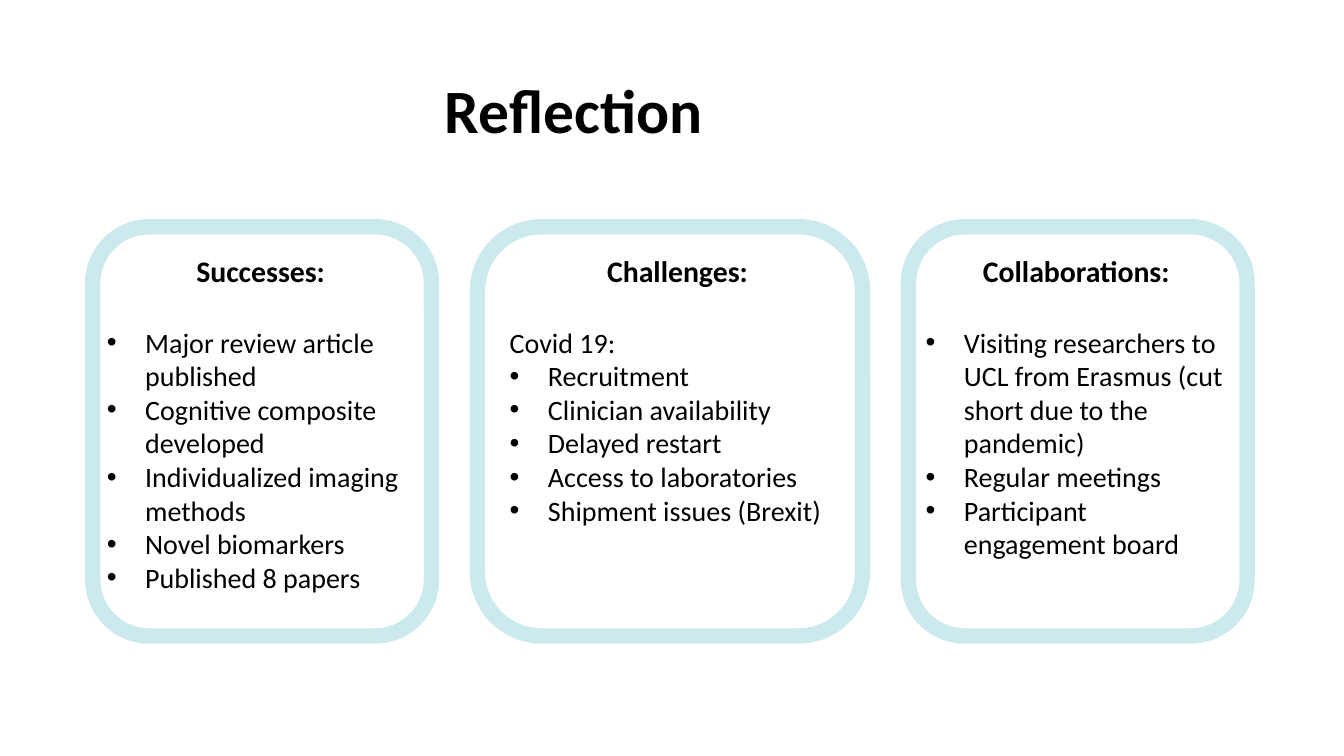
from lxml import etree
from pptx import Presentation
from pptx.dml.color import RGBColor
from pptx.enum.shapes import MSO_SHAPE
from pptx.enum.text import MSO_ANCHOR, PP_ALIGN
from pptx.oxml.ns import qn
from pptx.util import Inches, Pt

ROUNDED = MSO_SHAPE.ROUNDED_RECTANGLE
CENTER, LEFT = PP_ALIGN.CENTER, PP_ALIGN.LEFT
TOP, MIDDLE = MSO_ANCHOR.TOP, MSO_ANCHOR.MIDDLE

FONT = "Calibri"
BLACK, TEAL = "000000", "0096A9"
TITLE = "Reflection"

# heading, lead-in line, bullets, card width, text inset from card, text width
CARDS = [
    ("Successes:", None,
     ["Major review article published", "Cognitive composite developed",
      "Individualized imaging methods", "Novel biomarkers", "Published 8 papers"],
     3.36, 0.14, 3.05),
    ("Challenges:", "Covid 19:",
     ["Recruitment", "Clinician availability", "Delayed restart",
      "Access to laboratories", "Shipment issues (Brexit)"],
     3.82, 0.32, 3.33),
    ("Collaborations:", None,
     ["Visiting researchers to UCL from Erasmus (cut short due to the pandemic)",
      "Regular meetings", "Participant engagement board"],
     3.36, 0.17, 2.99),
]
CARD_LEFT, CARD_TOP, CARD_HEIGHT, CARD_GAP = 0.92, 2.25, 4.06, 0.455
TEXT_TOP, TEXT_HEIGHT = 2.51, 3.41
INDENT = 0.38


def color(hex_value):
    return RGBColor.from_string(hex_value)


def add_frame(slide, left, top, width, height, anchor=TOP):
    """Add a wrapping text box without margins and return its text frame."""
    box = slide.shapes.add_textbox(Inches(left), Inches(top), Inches(width), Inches(height))
    frame = box.text_frame
    frame.word_wrap = True
    frame.vertical_anchor = anchor
    frame.margin_left = frame.margin_right = frame.margin_top = frame.margin_bottom = 0
    return frame


def write(paragraph, text, size, bold=False, alignment=LEFT, bullet=False):
    paragraph.text = text
    paragraph.alignment = alignment
    if bullet:
        properties = paragraph._p.get_or_add_pPr()
        properties.set("marL", str(Inches(INDENT)))
        properties.set("indent", str(-Inches(INDENT)))
        etree.SubElement(properties, qn("a:buFont")).set("typeface", "Arial")
        etree.SubElement(properties, qn("a:buChar")).set("char", "•")
    font = paragraph.font
    font.name, font.size, font.bold = FONT, Pt(size), bold
    font.color.rgb = color(BLACK)


def add_card(slide, left, width):
    card = slide.shapes.add_shape(ROUNDED, Inches(left), Inches(CARD_TOP),
                                  Inches(width), Inches(CARD_HEIGHT))
    card.shadow.inherit = False
    card.fill.background()
    card.line.width = Pt(11)
    card.line.color.rgb = color(TEAL)
    line_color = card.line._ln.find(".//" + qn("a:srgbClr"))
    etree.SubElement(line_color, qn("a:alpha")).set("val", "20000")


def main():
    presentation = Presentation()
    presentation.slide_width, presentation.slide_height = Inches(13.33), Inches(7.5)
    slide = presentation.slides.add_slide(presentation.slide_layouts[6])

    title = add_frame(slide, 0.92, 0.4, 9.54, 1.45, MIDDLE).paragraphs[0]
    write(title, TITLE, 44, bold=True, alignment=CENTER)
    title.line_spacing = 0.9

    left = CARD_LEFT
    for heading, lead, bullets, width, inset, text_width in CARDS:
        add_card(slide, left, width)
        frame = add_frame(slide, left + inset, TEXT_TOP, text_width, TEXT_HEIGHT)
        write(frame.paragraphs[0], heading, 21.3, bold=True, alignment=CENTER)
        frame.paragraphs[0].space_after = Pt(26)
        if lead:
            write(frame.add_paragraph(), lead, 20)
        for item in bullets:
            write(frame.add_paragraph(), item, 20, bullet=True)
        left += width + CARD_GAP

    presentation.save("out.pptx")


if __name__ == "__main__":
    main()
